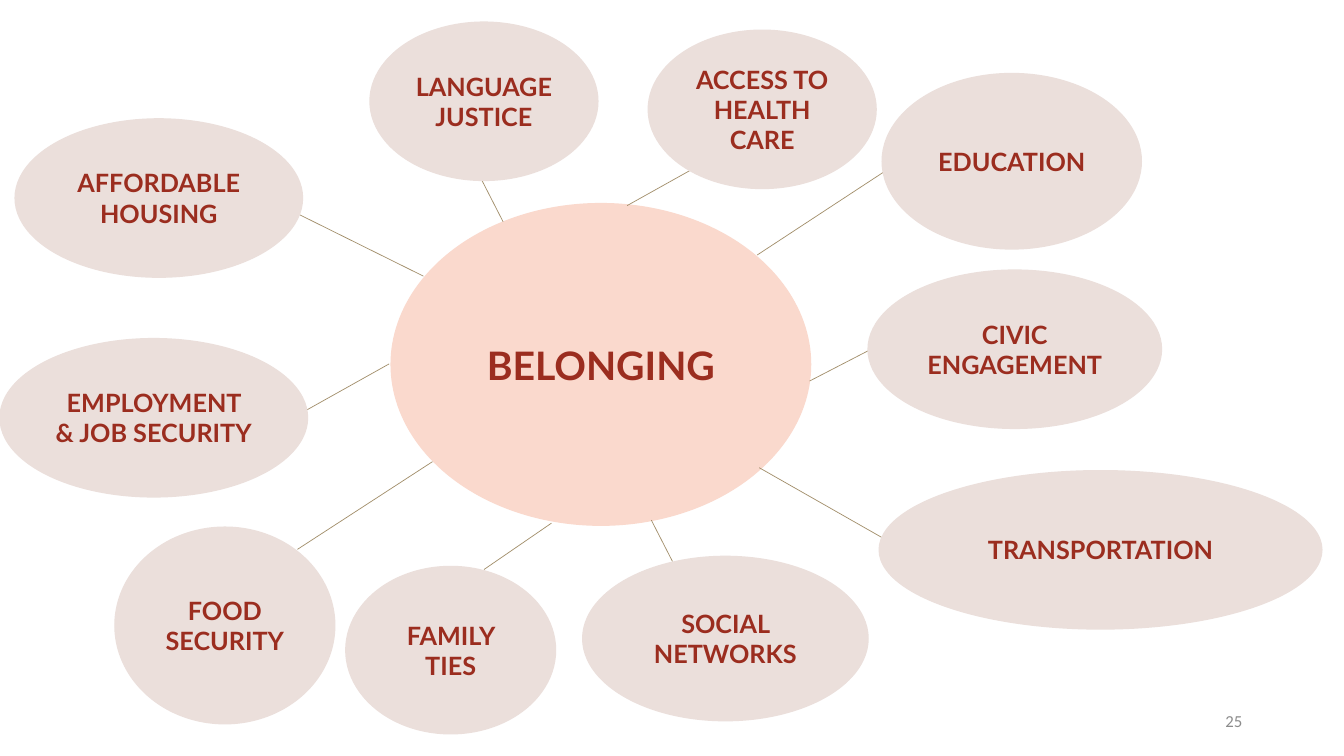
from lxml.etree import SubElement
from pptx import Presentation
from pptx.dml.color import RGBColor
from pptx.enum.shapes import MSO_CONNECTOR, MSO_SHAPE
from pptx.enum.text import MSO_ANCHOR, PP_ALIGN
from pptx.oxml.ns import qn
from pptx.util import Inches, Pt

COLUMNS, ROWS = 13.33, 7.5
CELL = Inches(1)
HUB_FILL, TOPIC_FILL = "FAD9CD", "EBDFDB"
LABEL_COLOR, SPOKE_COLOR, NUMBER_COLOR = "9B2D1F", "A28E6A", "8C8C8C"

HUB = ("BELONGING", (3.88, 2.02, 4.16, 3.19))
TOPICS = [
    ("AFFORDABLE HOUSING", (0.15, 1.18, 2.85, 1.57), (2.95, 2.12, 4.2, 2.74)),
    ("EMPLOYMENT & JOB SECURITY", (0, 3.36, 3.05, 1.57), (3.02, 4.08, 3.86, 3.61)),
    ("FOOD SECURITY", (1.14, 5.23, 2.18, 1.95), (2.95, 5.45, 4.29, 4.58)),
    ("LANGUAGE JUSTICE", (3.67, 0.22, 2.26, 1.57), (4.78, 1.79, 4.99, 2.2)),
    ("EDUCATION", (8.75, 0.73, 2.57, 1.74), (8.76, 1.71, 7.51, 2.53)),
    ("ACCESS TO HEALTH CARE", (6.43, 0.3, 2.26, 1.57), (6.9, 1.66, 6.22, 2.04)),
    ("TRANSPORTATION", (8.72, 4.67, 4.39, 1.57), (8.76, 5.34, 7.53, 4.64)),
    ("SOCIAL NETWORKS", (5.78, 5.52, 2.83, 1.63), (6.67, 5.57, 6.46, 5.16)),
    ("FAMILY TIES", (3.43, 5.62, 2.08, 1.66), (4.8, 5.65, 5.47, 5.19)),
    ("CIVIC ENGAGEMENT", (8.61, 2.68, 2.91, 1.57), (8.63, 3.47, 8.03, 3.78)),
]


def color(value):
    """Turn a hex string into a colour."""
    return RGBColor.from_string(value)


def cells(*counts):
    """Turn counts of grid cells into lengths."""
    return [round(count * CELL) for count in counts]


def write(shape, text, font, size, hex_color, align, bold=False):
    """Set the text of a shape and format it."""
    frame = shape.text_frame
    frame.word_wrap = True
    frame.vertical_anchor = MSO_ANCHOR.MIDDLE
    frame.text = text
    para = frame.paragraphs[0]
    para.alignment = align
    span = para.runs[0]
    span.font.name = font
    span.font.size = Pt(size)
    span.font.bold = bold
    span.font.color.rgb = color(hex_color)


def add_bubble(slide, box, text, fill, size):
    """Draw a labelled ellipse that fills the box."""
    bubble = slide.shapes.add_shape(MSO_SHAPE.OVAL, *cells(*box))
    bubble.shadow.inherit = False
    bubble.fill.solid()
    bubble.fill.fore_color.rgb = color(fill)
    bubble.line.color.rgb = color(fill)
    bubble.line.width = Pt(1)
    write(bubble, text, "Lato", size, LABEL_COLOR, PP_ALIGN.CENTER, bold=True)


def add_spoke(slide, ends):
    """Draw a thin line from a topic to the hub."""
    spoke = slide.shapes.add_connector(MSO_CONNECTOR.STRAIGHT, *cells(*ends))
    spoke.line.color.rgb = color(SPOKE_COLOR)
    spoke.line.width = Pt(0.5)
    SubElement(spoke.element.spPr, qn("a:effectLst"))


def add_mind_map(slide, box):
    """Draw the hub, its spokes and its topics from the box's corner."""
    left, top = box[:2]

    def place(x, y, *rest):
        """Shift a position into the box."""
        return (left + x, top + y, *rest)

    hub_text, hub_box = HUB
    add_bubble(slide, place(*hub_box), hub_text, HUB_FILL, 28)
    for _, _, (x1, y1, x2, y2) in TOPICS:
        add_spoke(slide, place(x1, y1) + place(x2, y2))
    for text, topic_box, _ in TOPICS:
        add_bubble(slide, place(*topic_box), text, TOPIC_FILL, 18)


def add_page_number(slide, box, number):
    """Write the page number at the right of the box."""
    label = slide.shapes.add_textbox(*cells(*box))
    write(label, number, "Calibri", 12, NUMBER_COLOR, PP_ALIGN.RIGHT)


def main():
    """Build the deck and save it."""
    deck = Presentation()
    deck.slide_width, deck.slide_height = cells(COLUMNS, ROWS)
    page = deck.slides.add_slide(deck.slide_layouts[6])
    add_page_number(page, (9.42, 6.95, 3, 0.4), "25")
    add_mind_map(page, (0, 0, COLUMNS, ROWS))
    deck.save("out.pptx")


if __name__ == "__main__":
    main()
